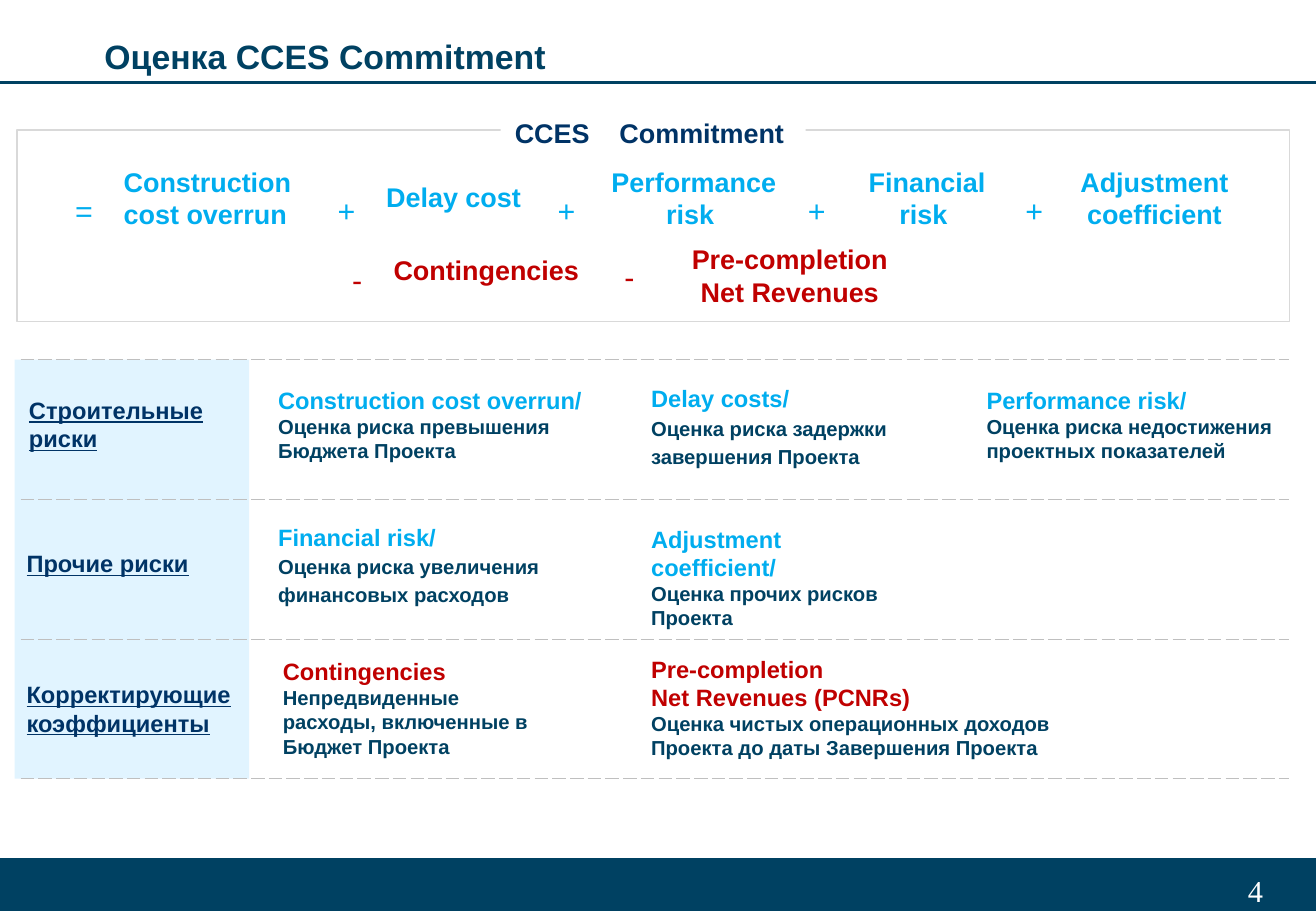
"""Builds the slide on the CCES Commitment estimate: formula on top, risk groups below."""
from lxml import etree
from pptx import Presentation
from pptx.dml.color import RGBColor
from pptx.enum import shapes, text
from pptx.oxml import ns
from pptx.util import Inches, Pt

TEAL = RGBColor(0x00, 0x41, 0x62)
NAVY = RGBColor(0x00, 0x33, 0x66)
SKY = RGBColor(0x00, 0xAD, 0xEF)
RED = RGBColor(0xC0, 0x00, 0x00)
PALE = RGBColor(0xE1, 0xF4, 0xFF)
FRAME_GREY = RGBColor(0xD9, 0xD9, 0xD9)
WHITE = RGBColor(0xFF, 0xFF, 0xFF)
LEFT, CENTER = text.PP_ALIGN.LEFT, text.PP_ALIGN.CENTER

prs = Presentation()
prs.slide_width, prs.slide_height = Inches(10.83), Inches(7.5)
slide = prs.slides.add_slide(prs.slide_layouts[5])


def add_rect(left, top, width, height, fill=None, line=None):
    rect = slide.shapes.add_shape(shapes.MSO_SHAPE.RECTANGLE, Inches(left), Inches(top),
                                  Inches(width), Inches(height))
    rect.shadow.inherit = False
    if fill is None:
        rect.fill.background()
    else:
        rect.fill.solid()
        rect.fill.fore_color.rgb = fill
    if line is None:
        rect.line.fill.background()
    else:
        rect.line.color.rgb = line
        rect.line.width = Pt(0.75)
    return rect


def add_text(left, top, width, height, parts, align=LEFT, spacing=None,
             bold=True, underline=None, font="Arial"):
    frame = slide.shapes.add_textbox(Inches(left), Inches(top),
                                     Inches(width), Inches(height)).text_frame
    frame.word_wrap = True
    for index, (words, size, color) in enumerate(parts):
        paragraph = frame.add_paragraph() if index else frame.paragraphs[0]
        paragraph.alignment = align
        paragraph.line_spacing = spacing
        for number, line in enumerate(words.split("\n")):
            if number:
                paragraph.add_line_break()
            run = paragraph.add_run()
            run.text = line
            run.font.name = font
            run.font.size = Pt(size)
            run.font.bold = bold
            run.font.underline = underline
            run.font.color.rgb = color
    return frame


add_rect(0, 7.07, 10.83, 0.43, TEAL, TEAL)
page_number = add_text(10.13, 7.09, 0.4, 0.35, [("4", 18, WHITE)], bold=False,
                       font="Times New Roman")
page_number.margin_left, page_number.margin_right = Inches(0.14), Inches(0.02)
page_number.margin_top = Inches(0.09)

header_rule = slide.shapes.add_connector(shapes.MSO_CONNECTOR.STRAIGHT, 0, Inches(0.68),
                                         Inches(10.83), Inches(0.68))
header_rule.line.color.rgb = TEAL
header_rule.line.width = Pt(2.25)
etree.SubElement(header_rule._element.spPr, ns.qn("a:effectLst"))

title = slide.shapes.title
title.left, title.top, title.width, title.height = (
    Inches(0.76), Inches(0.24), Inches(9.75), Inches(0.39))
title.text_frame.auto_size = text.MSO_AUTO_SIZE.NONE
title.text_frame.vertical_anchor = text.MSO_ANCHOR.TOP
heading = title.text_frame.paragraphs[0]
heading.alignment = LEFT
heading_run = heading.add_run()
heading_run.text = "Оценка CCES Commitment"
heading_run.font.name = "Arial"
heading_run.font.size = Pt(20)
heading_run.font.bold = True
heading_run.font.color.rgb = TEAL

add_rect(0.12, 2.96, 1.93, 3.45, PALE)
risk_grid = slide.shapes.add_table(3, 1, Inches(0.17), Inches(2.96),
                                   Inches(10.44), Inches(3.45)).table
risk_grid.first_row = risk_grid.horz_banding = False
for row in risk_grid.rows:
    cell = row.cells[0]
    cell.fill.background()
    cell_props = cell._tc.get_or_add_tcPr()
    for position, side in enumerate(("lnL", "lnR", "lnT", "lnB")):
        border = etree.Element(ns.qn(f"a:{side}"), w="6350")
        if side in ("lnL", "lnR"):
            etree.SubElement(border, ns.qn("a:noFill"))
        else:
            paint = etree.SubElement(border, ns.qn("a:solidFill"))
            etree.SubElement(paint, ns.qn("a:srgbClr"), val="BFBFBF")
            etree.SubElement(border, ns.qn("a:prstDash"), val="sysDash")
        cell_props.insert(position, border)

add_rect(0.14, 1.07, 10.47, 1.58, line=FRAME_GREY)
caption = add_rect(4.12, 0.91, 2.51, 0.37, WHITE).text_frame
caption.word_wrap = False
caption.paragraphs[0].alignment = CENTER
for words, tracking in (("CCES", 0), (" ", 1330), ("Commitment ", 0)):
    run = caption.paragraphs[0].add_run()
    run.text = words
    run.font.name = "Arial"
    run.font.size = Pt(16)
    run.font.bold = True
    run.font.color.rgb = NAVY
    run._r.get_or_add_rPr().set("spc", str(tracking))

for left, top, width, height, term, color, align in (
        (0.92, 1.31, 1.73, 0.64, "Construction cost overrun", SKY, LEFT),
        (3.08, 1.44, 1.39, 0.37, "Delay cost", SKY, LEFT),
        (4.89, 1.31, 1.64, 0.64, "Performance risk ", SKY, CENTER),
        (6.95, 1.31, 1.36, 0.64, "Financial risk ", SKY, CENTER),
        (8.74, 1.31, 1.52, 0.64, "Adjustment coefficient", SKY, CENTER),
        (3.14, 2.04, 1.75, 0.37, "Contingencies", RED, LEFT),
        (5.4, 1.95, 2.2, 0.64, "Pre-completion Net Revenues", RED, CENTER)):
    add_text(left, top, width, height, [(term, 16, color)], align)

for left, top, sign, color in (
        (0.52, 1.38, "=", SKY), (2.68, 1.38, "+", SKY), (4.49, 1.38, "+", SKY),
        (6.55, 1.38, "+", SKY), (8.34, 1.38, "+", SKY),
        (2.8, 1.95, "-", RED), (5.04, 1.93, "-", RED)):
    add_text(left, top, 0.37, 0.5, [(sign, 18, color)], spacing=1.5, bold=False)

for left, top, height, group in (
        (0.14, 3.21, 0.57, "Строительные риски"),
        (0.12, 4.47, 0.34, "Прочие риски"),
        (0.12, 5.55, 0.57, "Корректирующие коэффициенты")):
    add_text(left, top, 1.88, height, [(group, 14, NAVY)], underline=True)

for left, top, width, height, term, color, meaning, spacing in (
        (2.19, 3.13, 2.7, 0.74, "Construction cost overrun/", SKY,
         "Оценка риска превышения Бюджета Проекта", None),
        (5.26, 3.08, 2.2, 0.84, "Delay costs/", SKY,
         "Оценка риска задержки завершения Проекта", 1.15),
        (8.02, 3.13, 2.69, 0.74, "Performance risk/", SKY,
         "Оценка риска недостижения проектных показателей", None),
        (2.19, 4.22, 2.41, 0.84, "Financial risk/", SKY,
         "Оценка риска увеличения финансовых расходов", 1.15),
        (5.26, 4.27, 2.35, 0.74, "Adjustment coefficient/", SKY,
         "Оценка прочих рисков Проекта", None),
        (2.23, 5.36, 2.33, 0.94, "Contingencies", RED,
         "Непредвиденные расходы, включенные в Бюджет Проекта", None),
        (5.26, 5.34, 3.88, 0.98, "Pre-completion\nNet Revenues (PCNRs)", RED,
         "Оценка чистых операционных доходов Проекта до даты Завершения Проекта", None)):
    add_text(left, top, width, height, [(term, 14, color), (meaning, 12, TEAL)],
             spacing=spacing)

prs.save("out.pptx")
